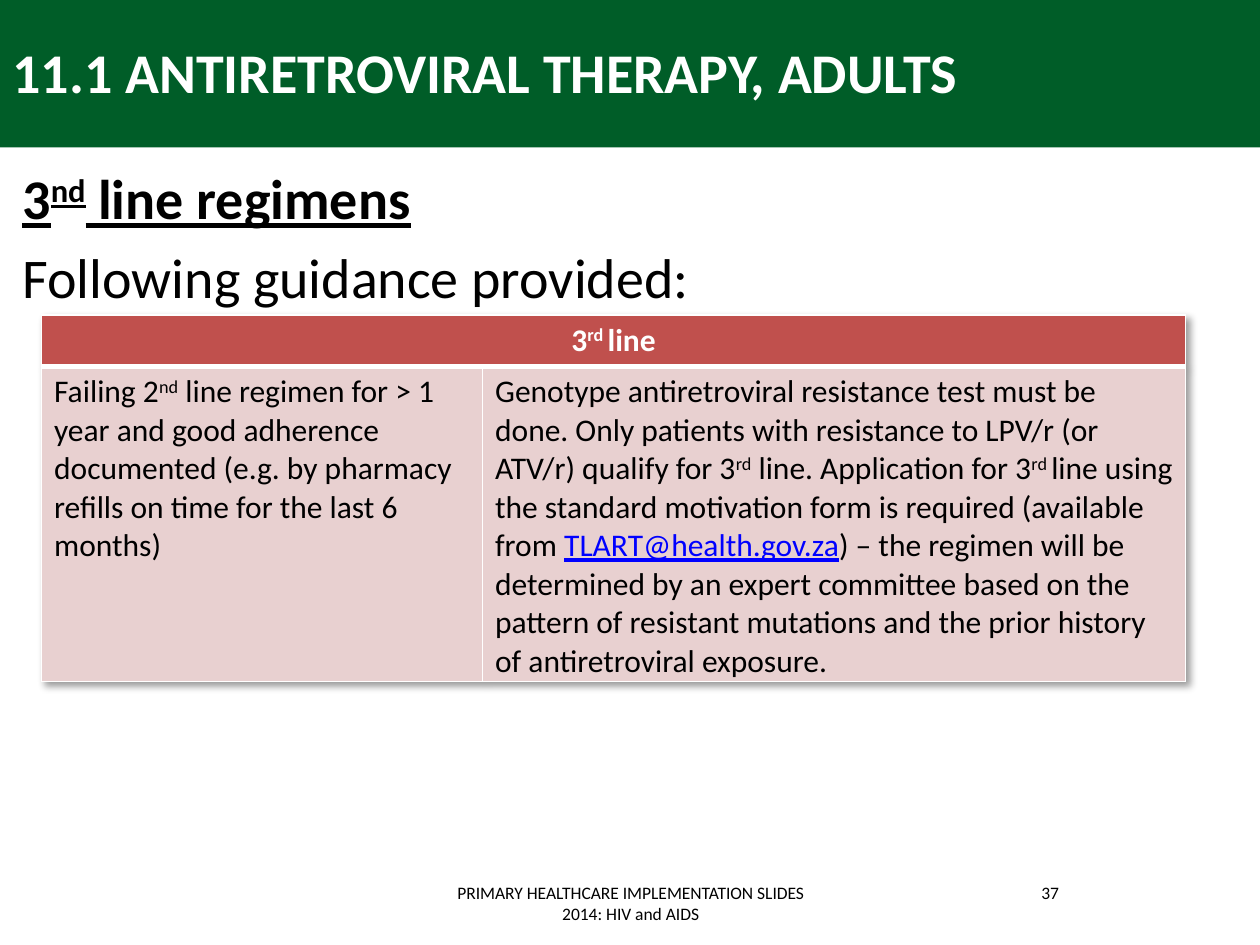
from dataclasses import dataclass

from lxml import etree
from pptx import Presentation
from pptx.dml.color import RGBColor
from pptx.enum import shapes, text
from pptx.oxml import ns
from pptx.util import Inches, Pt


@dataclass(frozen=True)
class Theme:
    font: str = "Calibri"
    green: str = "005D28"
    red: str = "C0504D"
    pink: str = "E8D0D0"
    black: str = "000000"
    white: str = "FFFFFF"
    link: str = "0000FF"
    heading: int = 32
    cell: int = 18
    footer: int = 10


T = Theme()


def rgb(value):
    return RGBColor.from_string(value)


def add_run(p, words, size, color=T.black, bold=False, underline=False, sup=False):
    r = p.add_run()
    r.text = words
    f = r.font
    f.name, f.size, f.bold, f.underline = T.font, Pt(size), bold, underline
    f.color.rgb = rgb(color)
    if sup:
        r._r.get_or_add_rPr().set("baseline", "30000")


def add_box(s, box):
    tf = s.shapes.add_textbox(*map(Inches, box)).text_frame
    tf.word_wrap = True
    return tf


def add_header(s, box, words):
    x, y, w, h = box
    title = s.shapes.title
    title.left, title.top = Inches(x), Inches(y + 0.25)
    title.width, title.height = Inches(w - 1), Inches(h - 0.25)
    band = s.shapes.add_shape(shapes.MSO_SHAPE.RECTANGLE, *map(Inches, box))
    band.shadow.inherit = False
    band.fill.solid()
    band.fill.fore_color.rgb = rgb(T.green)
    band.line.fill.background()
    title._element.addprevious(band._element)
    tf = title.text_frame
    tf.word_wrap = True
    tf.auto_size = text.MSO_AUTO_SIZE.NONE
    tf.vertical_anchor = text.MSO_ANCHOR.TOP
    p = tf.paragraphs[0]
    p.alignment = text.PP_ALIGN.LEFT
    add_run(p, words, T.heading, T.white, bold=True)


def add_body(s, box):
    tf = add_box(s, box)
    p = tf.paragraphs[0]
    for words, sup in (("3", False), ("nd", True), (" line regimens", False)):
        add_run(p, words, T.heading, bold=True, underline=True, sup=sup)
    p = tf.add_paragraph()
    p.space_before = Pt(0.2 * T.heading)
    add_run(p, "Following guidance provided:", T.heading)


def set_borders(cell, bottom=1):
    tcPr = cell._tc.get_or_add_tcPr()
    widths = {"lnL": 1, "lnR": 1, "lnT": 1, "lnB": bottom}
    for i, (side, width) in enumerate(widths.items()):
        ln = etree.Element(ns.qn("a:" + side), w=str(Pt(width)))
        fill = etree.SubElement(ln, ns.qn("a:solidFill"))
        etree.SubElement(fill, ns.qn("a:srgbClr"), val=T.white)
        tcPr.insert(i, ln)


def fill_cell(cell, back, runs, bottom=1, **style):
    cell.fill.solid()
    cell.fill.fore_color.rgb = rgb(back)
    set_borders(cell, bottom)
    p = cell.text_frame.paragraphs[0]
    for words, extra in runs:
        add_run(p, words, T.cell, **{**style, **extra})
    return p


def add_table_shadow(table):
    effects = etree.Element(ns.qn("a:effectLst"))
    shadow = etree.SubElement(effects, ns.qn("a:outerShdw"), blurRad=str(Pt(4)),
                              dist=str(Pt(3)), dir="2700000", algn="tl", rotWithShape="0")
    color = etree.SubElement(shadow, ns.qn("a:srgbClr"), val=T.black)
    etree.SubElement(color, ns.qn("a:alpha"), val="40000")
    table._tbl.tblPr.insert(0, effects)


def add_regimen_table(s, box):
    table = s.shapes.add_table(2, 2, *map(Inches, box)).table
    for column, width in zip(table.columns, (3.5, box[2] - 3.5)):
        column.width = Inches(width)
    for row, height in zip(table.rows, (0.41, box[3] - 0.41)):
        row.height = Inches(height)
    add_table_shadow(table)

    plain, sup = {}, {"sup": True}
    head = table.cell(0, 0)
    head.merge(table.cell(0, 1))
    p = fill_cell(head, T.red, [("3", plain), ("rd ", sup), ("line", plain)],
                  bottom=3, color=T.white, bold=True)
    p.alignment = text.PP_ALIGN.CENTER
    fill_cell(table.cell(1, 0), T.pink, [
        ("Failing 2", plain),
        ("nd", sup),
        (" line regimen for > 1 year and good adherence documented "
         "(e.g. by pharmacy refills on time for the last 6 months)", plain),
    ])
    fill_cell(table.cell(1, 1), T.pink, [
        ("Genotype antiretroviral resistance test must be done. Only patients "
         "with resistance to LPV/r (or ATV/r) qualify for 3", plain),
        ("rd", sup),
        (" line. Application for 3", plain),
        ("rd ", sup),
        ("line using the standard motivation form is required (available from ", plain),
        ("TLART@health.gov.za", {"color": T.link, "underline": True}),
        (") – the regimen will be determined by an expert committee based on the "
         "pattern of resistant mutations and the prior history of antiretroviral "
         "exposure.", plain),
    ])


def add_footer(s, box, words):
    p = add_box(s, box).paragraphs[0]
    p.alignment = text.PP_ALIGN.CENTER
    add_run(p, words, T.footer)


def main():
    prs = Presentation()
    prs.slide_width, prs.slide_height = Inches(10), Inches(7.5)
    s = prs.slides.add_slide(prs.slide_layouts[5])
    add_header(s, (0, 0, 10, 1.17), "11.1 ANTIRETROVIRAL THERAPY, ADULTS")
    add_body(s, (0.08, 1.25, 9.76, 5.33))
    add_regimen_table(s, (0.33, 2.5, 9.08, 2.91))
    add_footer(s, (3.42, 6.95, 3.17, 0.4),
               "PRIMARY HEALTHCARE IMPLEMENTATION SLIDES 2014: HIV and AIDS")
    add_footer(s, (7.17, 6.95, 2.33, 0.4), "37")
    prs.save("out.pptx")


if __name__ == "__main__":
    main()
